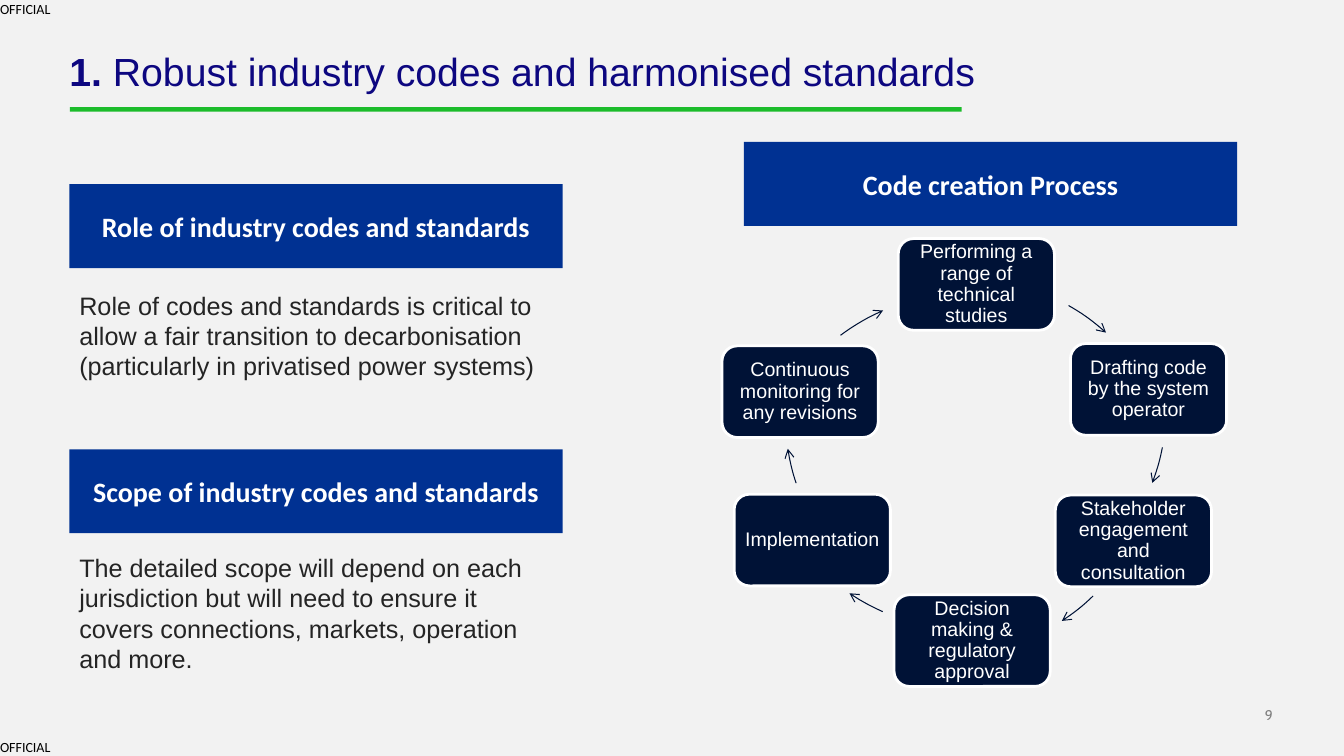
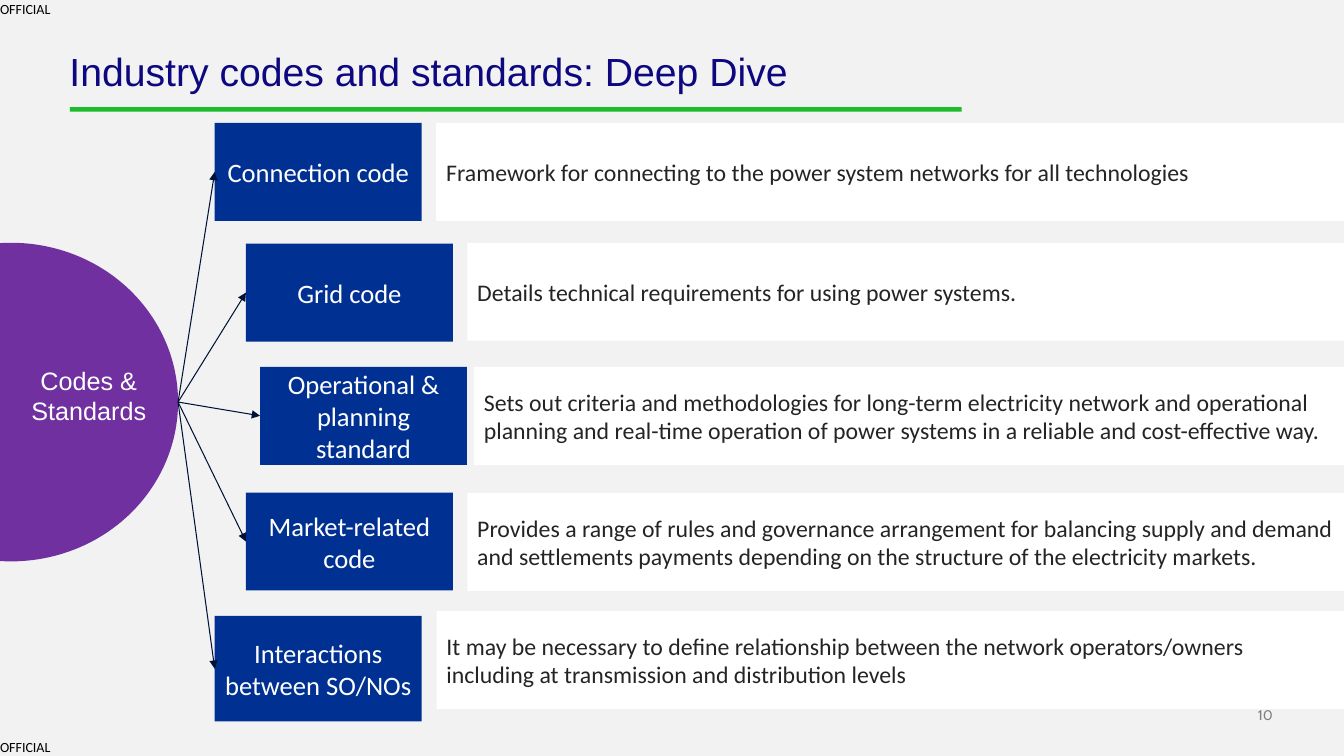
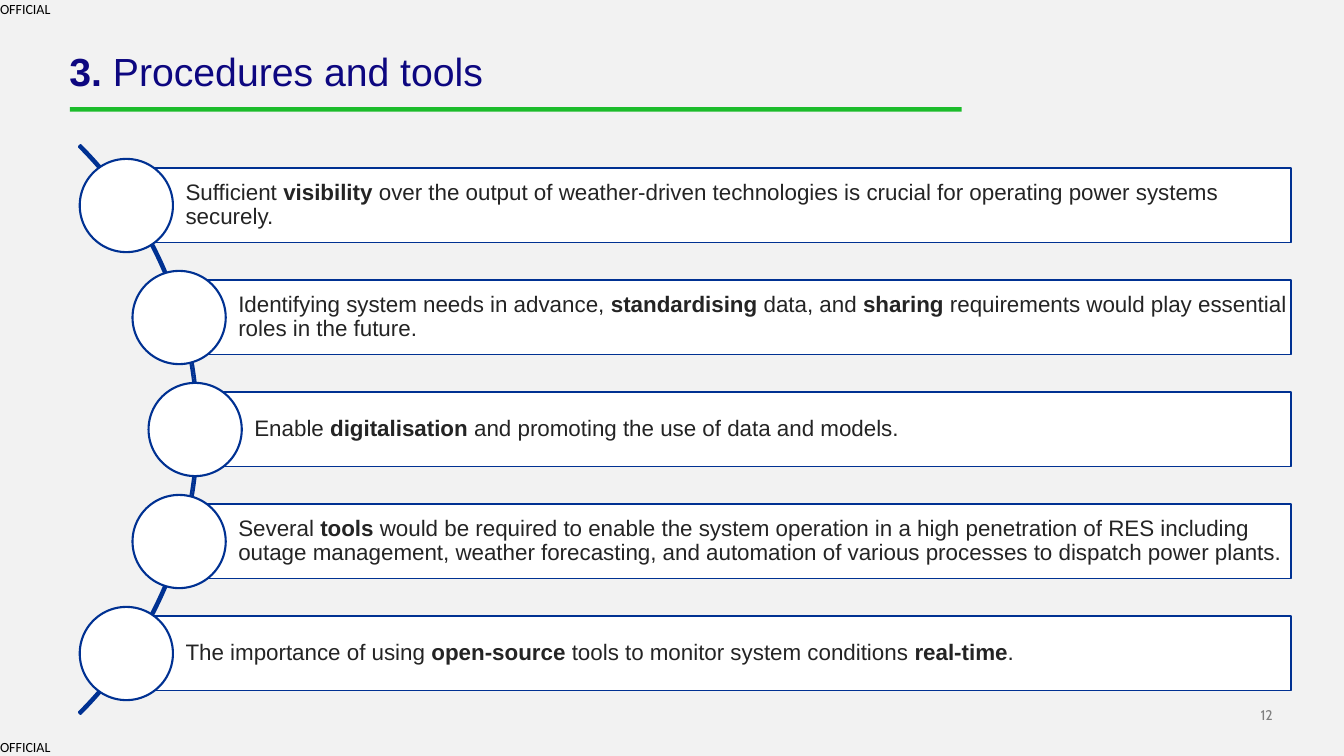
"""Build three slides on industry codes, standards, procedures and tools."""
from dataclasses import dataclass
from math import sqrt

from lxml.etree import SubElement
from pptx import Presentation
from pptx.dml.color import RGBColor
from pptx.enum.shapes import MSO_CONNECTOR, MSO_SHAPE
from pptx.enum.text import MSO_ANCHOR, MSO_AUTO_SIZE, PP_ALIGN
from pptx.oxml.ns import qn
from pptx.util import Pt

PAGE_WIDTH, PAGE_HEIGHT = 960, 540
BACKGROUND, WHITE, BLACK = "F2F2F2", "FFFFFF", "000000"
BLUE, NAVY, TITLE_BLUE = "003192", "001236", "0D0780"
GREEN, PURPLE, DARK, GREY = "1CBC2B", "7030A0", "242424", "7F7F7F"
LEFT, CENTER, RIGHT = PP_ALIGN.LEFT, PP_ALIGN.CENTER, PP_ALIGN.RIGHT
TOP, MIDDLE, BOTTOM = MSO_ANCHOR.TOP, MSO_ANCHOR.MIDDLE, MSO_ANCHOR.BOTTOM
DEFAULT_INSETS = (7.2, 3.6, 7.2, 3.6)
NO_INSETS = (0, 0, 0, 0)


@dataclass(frozen=True)
class Step:
    """A cycle step and the arc arrow that leaves it, with angles in degrees."""

    text: str
    left: float
    top: float
    arc_left: float
    arc_top: float
    arc_start: float
    arc_end: float


@dataclass(frozen=True)
class Section:
    """A headed paragraph."""

    heading: str
    body: str
    heading_top: float
    body_top: float
    body_height: float


@dataclass(frozen=True)
class Code:
    """A named code with its description panel."""

    name: str
    description: str
    left: float
    top: float
    panel_left: float
    panel_top: float
    height: float = 70


STEPS = (
    Step("Performing a range of technical studies", 641.6, 170.4, 532.8, 198, 299.7, 312),
    Step("Drafting code by the system operator", 764.6, 245.4, 524.9, 136.1, 11, 20.8),
    Step("Stakeholder engagement and consultation", 753.8, 353.6, 519.8, 160.6, 46.1, 56.7),
    Step("Decision making & regulatory approval", 638.6, 424.8, 538.6, 141.8, 113.8, 123.9),
    Step("Implementation", 524.4, 353, 560.9, 142.6, 161.7, 171.1),
    Step("Continuous monitoring for any revisions", 515.7, 247, 538.6, 208.8, 233.2, 246.3),
)
SECTIONS = (
    Section(
        "Role of industry codes and standards",
        "Role of codes and standards is critical to allow a fair transition to "
        "decarbonisation (particularly in privatised power systems)",
        131.5, 203.8, 73,
    ),
    Section(
        "Scope of industry codes and standards",
        "The detailed scope will depend on each jurisdiction but will need to ensure it "
        "covers connections, markets, operation and more.",
        320.9, 391, 94,
    ),
)
CODES = (
    Code(
        "Connection code",
        "Framework for connecting to the power system networks for all technologies",
        153.4, 87.8, 311.6, 87.8,
    ),
    Code(
        "Grid code",
        "Details technical requirements for using power systems.",
        175.7, 174, 333.8, 173.4,
    ),
    Code(
        "Operational & planning standard",
        "Sets out criteria and methodologies for long-term electricity network and "
        "operational planning and real-time operation of power systems in a reliable "
        "and cost-effective way.",
        185.8, 262, 338.5, 262,
    ),
    Code(
        "Market-related code",
        "Provides a range of rules and governance arrangement for balancing supply and "
        "demand and settlements payments depending on the structure of the electricity "
        "markets.",
        175.7, 351.8, 333.8, 352,
    ),
    Code(
        "Interactions between SO/NOs",
        "It may be necessary to define relationship between the network operators/owners "
        "including at transmission and distribution levels",
        153.4, 440, 311.8, 436.5, 75.4,
    ),
)
TOOLS = (
    "Sufficient *visibility* over the output of weather-driven technologies is crucial "
    "for operating power systems securely.",
    "Identifying system needs in advance, *standardising* data, and *sharing* requirements "
    "would play essential roles in the future.",
    "Enable *digitalisation* and promoting the use of data and models.",
    "Several *tools* would be required to enable the system operation in a high penetration "
    "of RES including outage management, weather forecasting, and automation of various "
    "processes to dispatch power plants.",
    "The importance of using *open-source* tools to monitor system conditions *real-time*.",
)


def rgb(color: str) -> RGBColor:
    """Turn a hex string into a colour."""
    return RGBColor.from_string(color)


def write_text(shape, text: str, *, size: float, font: str = "Arial", color: str = DARK,
               bold: bool = False, align=LEFT, anchor=TOP, insets=DEFAULT_INSETS,
               spacing: float = 1.0) -> None:
    """Fill a shape with one paragraph in which asterisks switch bold on and off."""
    frame = shape.text_frame
    frame.word_wrap = True
    frame.auto_size = MSO_AUTO_SIZE.NONE
    frame.vertical_anchor = anchor
    (frame.margin_left, frame.margin_top,
     frame.margin_right, frame.margin_bottom) = (Pt(inset) for inset in insets)
    para = frame.paragraphs[0]
    para.alignment = align
    para.line_spacing = spacing
    for index, part in enumerate(text.split("*")):
        if part:
            span = para.add_run()
            span.text = part
            span.font.name = font
            span.font.size = Pt(size)
            span.font.bold = bold or index % 2 == 1
            span.font.color.rgb = rgb(color)


def add_box(page, kind, left: float, top: float, width: float, height: float, *,
            fill: str | None = None, line: str | None = None, weight: float = 1):
    """Add a flat preset shape."""
    box = page.shapes.add_shape(kind, Pt(left), Pt(top), Pt(width), Pt(height))
    box.shadow.inherit = False
    if fill:
        box.fill.solid()
        box.fill.fore_color.rgb = rgb(fill)
    else:
        box.fill.background()
    if line:
        box.line.color.rgb = rgb(line)
        box.line.width = Pt(weight)
    else:
        box.line.fill.background()
    return box


def add_label(page, text: str, left: float, top: float, width: float, height: float,
              **text_format) -> None:
    """Add a text box."""
    box = page.shapes.add_textbox(Pt(left), Pt(top), Pt(width), Pt(height))
    write_text(box, text, **text_format)


def add_arrowhead(shape, kind: str) -> None:
    """Put an arrowhead at the end of a line."""
    SubElement(shape.element.spPr.find(qn("a:ln")), qn("a:tailEnd"), type=kind)


def add_heading(page, text: str, left: float, top: float) -> None:
    """Add a blue heading band."""
    band = add_box(page, MSO_SHAPE.RECTANGLE, left, top, 352.3, 60, fill=BLUE)
    write_text(band, text, size=20, font="Calibri", color=WHITE, bold=True,
               align=CENTER, anchor=MIDDLE)


def prepare_deck():
    """Create the deck with its background and title position."""
    deck = Presentation()
    deck.slide_width, deck.slide_height = Pt(PAGE_WIDTH), Pt(PAGE_HEIGHT)
    background = deck.slide_master.background.fill
    background.solid()
    background.fore_color.rgb = rgb(BACKGROUND)
    title = deck.slide_layouts.get_by_name("Title Only").placeholders[0]
    title.left, title.top, title.width, title.height = Pt(49.6), Pt(37.3), Pt(672), Pt(30.2)
    return deck


def add_page(deck, title: str, number: int):
    """Add a page with title, green rule, markings and page number."""
    page = deck.slides.add_slide(deck.slide_layouts.get_by_name("Title Only"))
    write_text(page.shapes.title, title, size=28, color=TITLE_BLUE, insets=NO_INSETS,
               spacing=0.9)
    add_box(page, MSO_SHAPE.RECTANGLE, 50, 76.6, 637, 3.2, fill=GREEN)
    for top in (0, 527.8):
        add_label(page, "OFFICIAL", 0, top, 40, 12, size=10, font="Calibri", color=BLACK,
                  insets=NO_INSETS)
    add_label(page, str(number), 879, 504.6, 30.2, 12.2, size=10, font="Cabin", color=GREY,
              align=RIGHT, anchor=BOTTOM, insets=NO_INSETS)
    return page


def build_standards(deck) -> None:
    """Build the page with two sections and the code creation cycle."""
    page = add_page(deck, "*1.* Robust industry codes and harmonised standards", 9)
    for section in SECTIONS:
        add_heading(page, section.heading, 49.6, section.heading_top)
        add_label(page, section.body, 49.6, section.body_top, 352.3, section.body_height,
                  size=18)
    add_heading(page, "Code creation Process", 531.4, 101.4)
    for step in STEPS:
        node = add_box(page, MSO_SHAPE.ROUNDED_RECTANGLE, step.left, step.top, 111.6, 65.5,
                       fill=NAVY, line=WHITE, weight=2)
        write_text(node, step.text, size=14, color=WHITE, align=CENTER, anchor=MIDDLE,
                   insets=(3, 3, 3, 3), spacing=0.9)
        arc = add_box(page, MSO_SHAPE.ARC, step.arc_left, step.arc_top, 308.2, 308.2,
                      line=NAVY, weight=0.75)
        arc.adjustments[0] = step.arc_start * 0.6
        arc.adjustments[1] = step.arc_end * 0.6
        add_arrowhead(arc, "arrow")


def build_deep_dive(deck) -> None:
    """Build the page that fans out from one hub to five codes."""
    page = add_page(deck, "Industry codes and standards: Deep Dive", 10)
    add_box(page, MSO_SHAPE.OVAL, -111.4, 173.4, 238.6, 227.6, fill=PURPLE)
    for code in CODES:
        box = add_box(page, MSO_SHAPE.RECTANGLE, code.left, code.top, 147.8, code.height,
                      fill=BLUE)
        write_text(box, code.name, size=19, font="Calibri", color=WHITE, align=CENTER,
                   anchor=MIDDLE)
        panel = add_box(page, MSO_SHAPE.RECTANGLE, code.panel_left, code.panel_top,
                        PAGE_WIDTH - code.panel_left, 70, fill=WHITE)
        write_text(panel, code.description, size=17, font="Calibri", anchor=MIDDLE)
        arrow = page.shapes.add_connector(MSO_CONNECTOR.STRAIGHT, Pt(127.2), Pt(287.2),
                                          Pt(code.left), Pt(code.top + code.height / 2))
        arrow.end_connect(box, 1)
        arrow.line.color.rgb = rgb(NAVY)
        arrow.line.width = Pt(0.75)
        add_arrowhead(arrow, "triangle")
        SubElement(arrow.element.spPr, qn("a:effectLst"))
    add_label(page, "Codes & Standards", 13, 232.6, 100.8, 99.4, size=18, color=WHITE,
              align=CENTER, anchor=MIDDLE)


def build_tools(deck) -> None:
    """Build the page with five rows hung along an arc."""
    page = add_page(deck, "*3.* Procedures and tools", 12)
    center_x, center_y, arc_radius, track_radius = -145.6, 306.8, 287.3, 285
    row_height, row_pitch, row_right, dot_radius = 53.3, 80, 922.3, 33.3
    arc = add_box(page, MSO_SHAPE.BLOCK_ARC, center_x - arc_radius, center_y - arc_radius,
                  2 * arc_radius, 2 * arc_radius, line=BLUE, weight=1.5)
    for index, value in enumerate((189, 27, 0.003)):
        arc.adjustments[index] = value
    for index, text in enumerate(TOOLS):
        offset = (index - len(TOOLS) // 2) * row_pitch
        left = center_x + sqrt(track_radius ** 2 - offset ** 2)
        middle = center_y + offset
        row = add_box(page, MSO_SHAPE.RECTANGLE, left, middle - row_height / 2,
                      row_right - left, row_height, fill=WHITE, line=BLUE)
        write_text(row, text, size=16, anchor=MIDDLE, insets=(42.3, 2.9, 2.9, 2.9),
                   spacing=0.9)
        add_box(page, MSO_SHAPE.OVAL, left - dot_radius, middle - dot_radius,
                2 * dot_radius, 2 * dot_radius, fill=WHITE, line=BLUE, weight=1.5)


def main() -> None:
    """Build and save the deck."""
    deck = prepare_deck()
    build_standards(deck)
    build_deep_dive(deck)
    build_tools(deck)
    deck.save("out.pptx")


if __name__ == "__main__":
    main()
